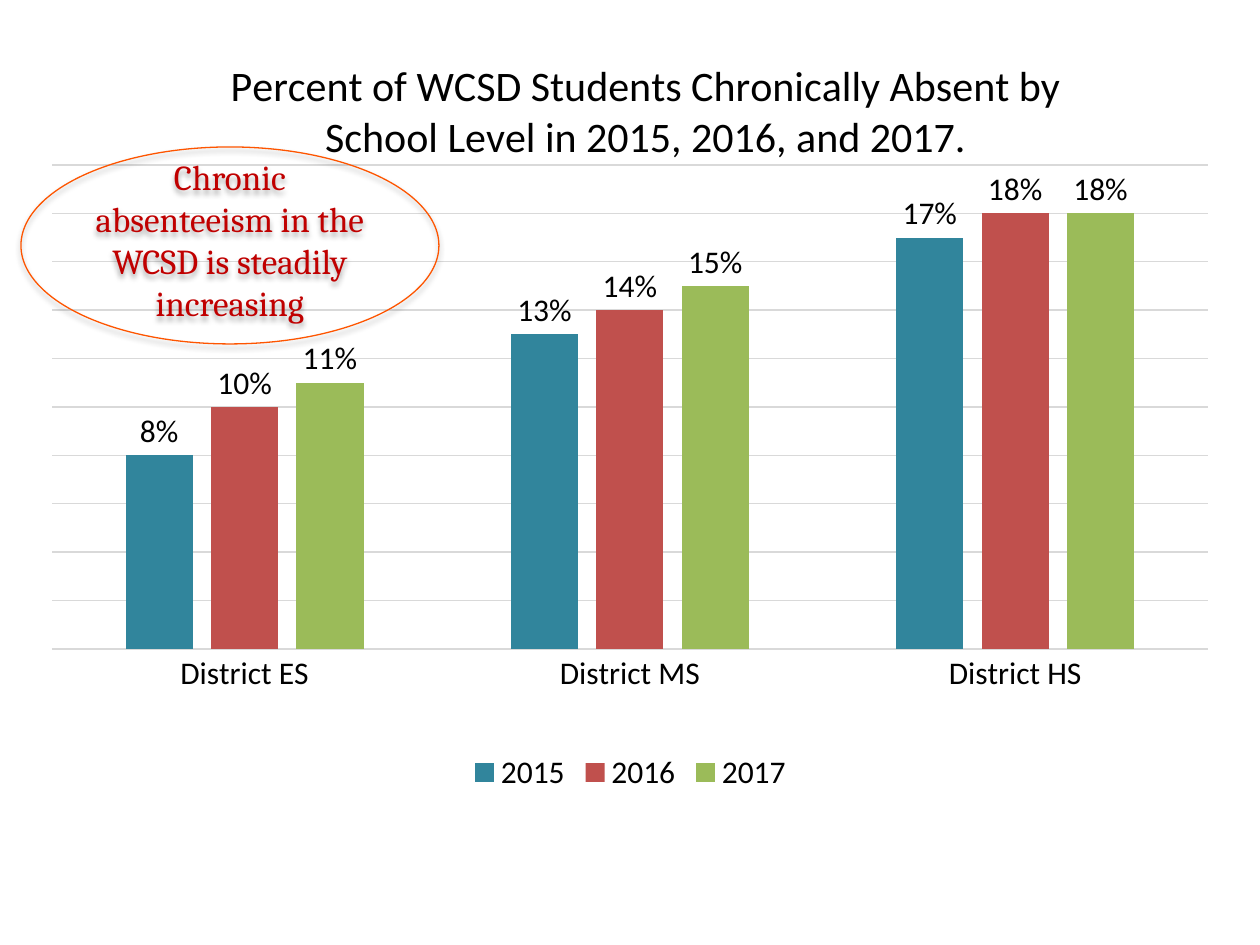
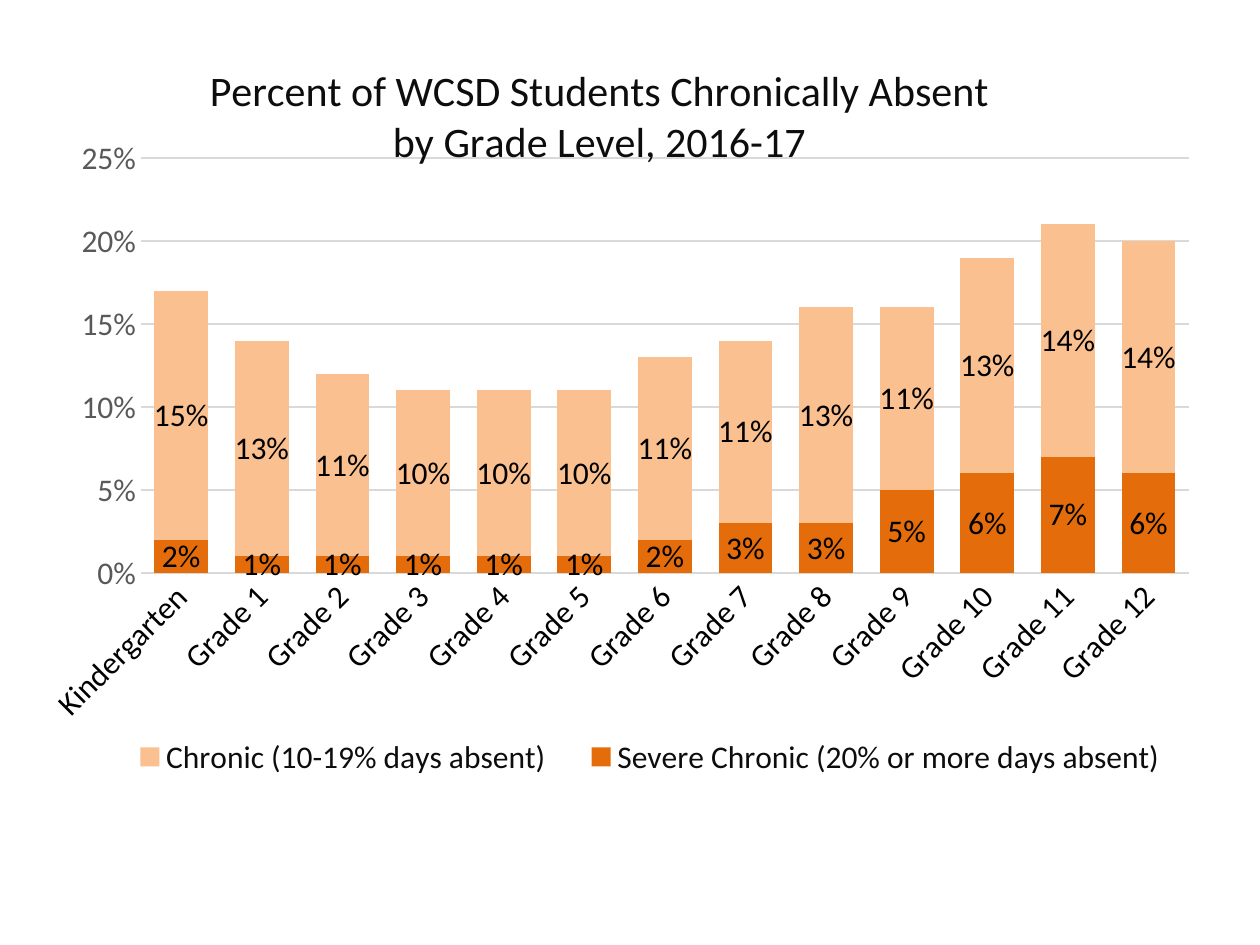
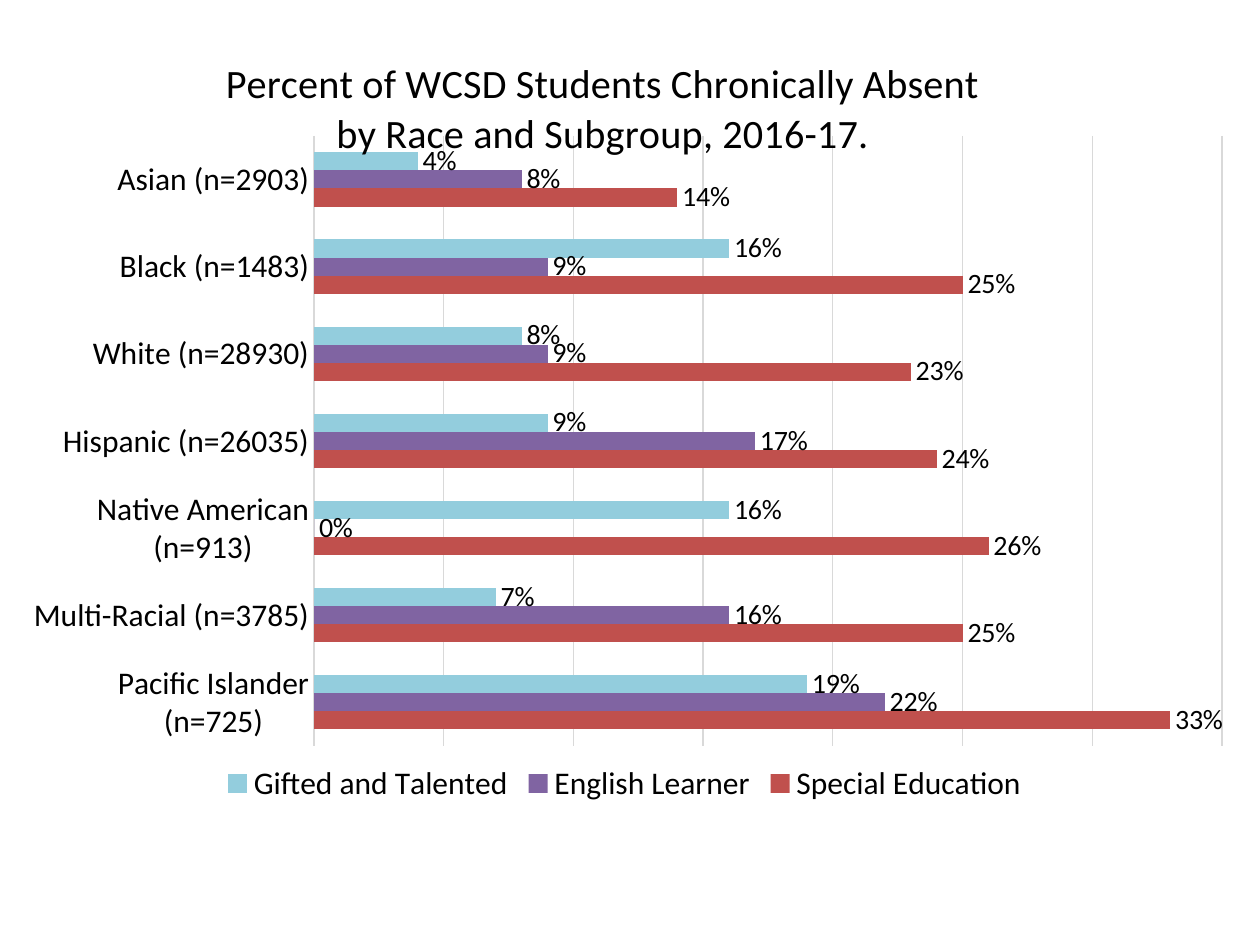
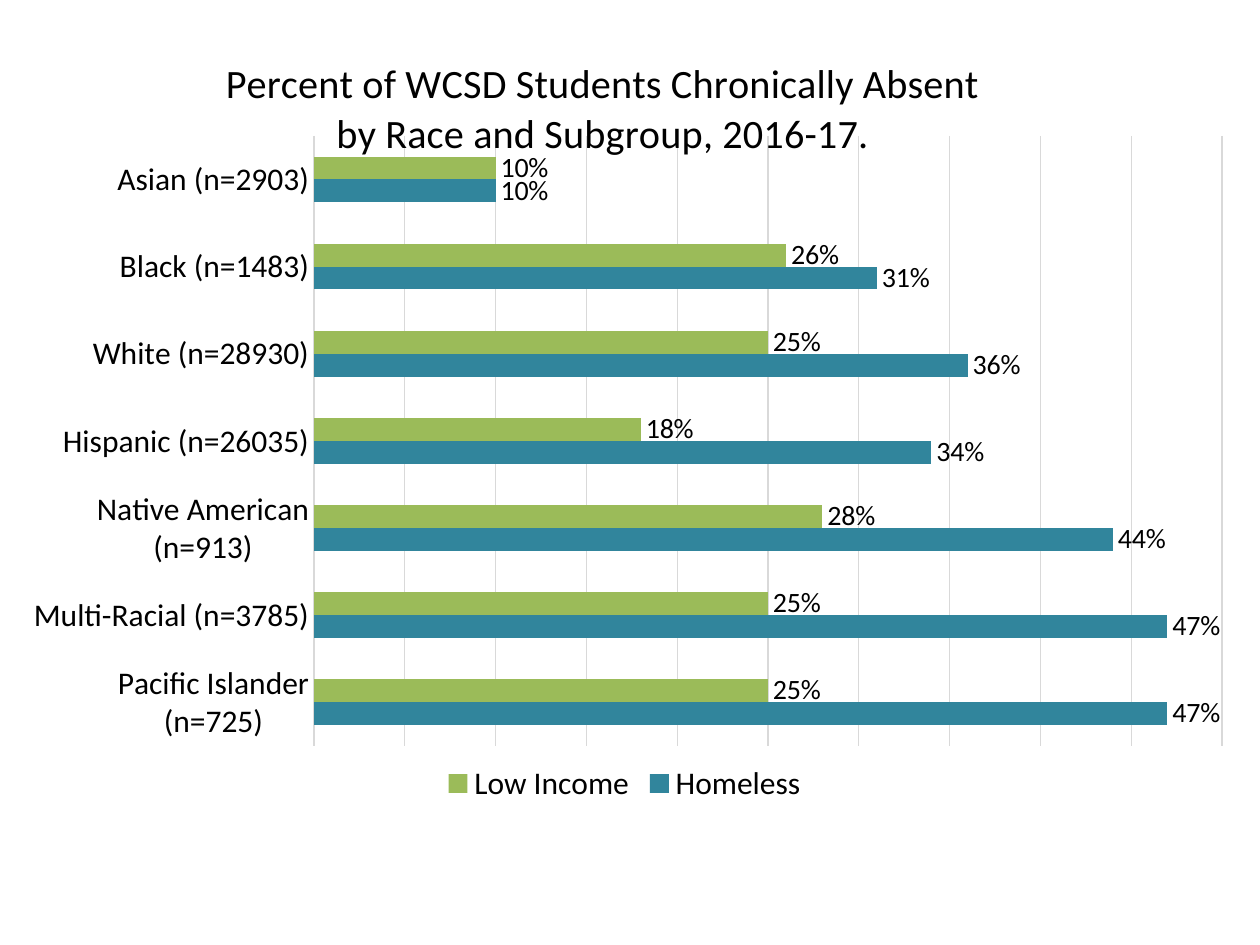
from dataclasses import dataclass
from typing import Optional

from lxml import etree
from pptx import Presentation
from pptx import util as u
from pptx.chart.data import CategoryChartData
from pptx.dml.color import RGBColor
from pptx.enum import chart as ec, shapes, text
from pptx.oxml import parse_xml
from pptx.oxml.ns import nsdecls, qn

PX = 914400 / 126
SLIDE = (1260, 945)
FONT, CALLOUT_FONT = "Calibri", "Cambria"
COLORS = {
    "text": "000000", "soft_text": "0D0D0D", "axis_text": "595959", "grid": "D9D9D9",
    "teal": "31859C", "red": "C0504D", "green": "9BBB59", "orange": "E46C0A",
    "peach": "FAC090", "purple": "8064A2", "sky": "93CDDD",
    "callout_line": "FE5500", "callout_text": "C00000",
}
TYPE = ec.XL_CHART_TYPE
LEGEND = ec.XL_LEGEND_POSITION


@dataclass
class Box:
    x: int
    y: int
    w: int = 0
    h: int = 0

    def emu(self) -> list[int]:
        return [px(v) for v in (self.x, self.y, self.w, self.h)]


@dataclass
class Series:
    name: str
    color: str
    values: list[float]


@dataclass
class ChartSlide:
    kind: TYPE
    title: str
    title_size: int
    title_at: Box
    frame: Box
    plot: Box
    categories: list[str]
    series: list[Series]
    axis_max: float
    axis_step: float
    gap: int
    overlap: int = 0
    label_size: int = 18
    text_color: str = "text"
    show_axis: bool = False
    label_angle: int = 0
    legend: LEGEND = LEGEND.BOTTOM
    legend_box: Optional[Box] = None


def px(n: float) -> int:
    return round(n * PX)


def rgb(name: str) -> RGBColor:
    return RGBColor.from_string(COLORS[name])


def style_font(font, size: int, color: str, name: str = FONT) -> None:
    font.name, font.size, font.bold = name, u.Pt(size), False
    font.color.rgb = rgb(color)


def style_line(line, color: str) -> None:
    line.width = u.Pt(0.75)
    line.color.rgb = rgb(color)


def set_layout(parent, box: Box, frame: Box, after: str = "", inner: bool = False) -> None:
    """Place a chart part at a slide position given in px."""
    for old in parent.findall(qn("c:layout")):
        parent.remove(old)
    layout = etree.Element(qn("c:layout"))
    manual = etree.SubElement(layout, qn("c:manualLayout"))
    values = {"xMode": "edge", "yMode": "edge",
              "x": (box.x - frame.x) / frame.w, "y": (box.y - frame.y) / frame.h}
    if inner:
        values = {"layoutTarget": "inner", **values}
    if box.w:
        values |= {"w": box.w / frame.w, "h": box.h / frame.h}
    for tag, value in values.items():
        val = value if isinstance(value, str) else f"{value:.4f}"
        etree.SubElement(manual, qn(f"c:{tag}")).set("val", val)
    position = parent.index(parent.find(qn(after))) + 1 if after else 0
    parent.insert(position, layout)


def style_axes(ch, spec_: ChartSlide) -> None:
    cat, val = ch.category_axis, ch.value_axis
    cat.major_tick_mark = val.major_tick_mark = ec.XL_TICK_MARK.NONE
    style_font(cat.tick_labels.font, 18, "text")
    style_line(cat.format.line, "grid")
    if spec_.label_angle:
        body = ch.element.xpath(".//c:catAx/c:txPr/a:bodyPr")[0]
        body.set("rot", str(spec_.label_angle * 60000))
    val.minimum_scale, val.maximum_scale = 0, spec_.axis_max
    val.major_unit = spec_.axis_step
    val.has_major_gridlines = True
    style_line(val.major_gridlines.format.line, "grid")
    val.tick_labels.number_format = "0%"
    val.tick_labels.number_format_is_linked = False
    style_font(val.tick_labels.font, 18, "axis_text")
    val.format.line.fill.background()
    val.visible = spec_.show_axis


def style_series(ch, spec_: ChartSlide) -> None:
    plot = ch.plots[0]
    plot.gap_width, plot.overlap = spec_.gap, spec_.overlap
    plot.vary_by_categories = False
    for ser, item in zip(plot.series, spec_.series):
        ser.format.fill.solid()
        ser.format.fill.fore_color.rgb = rgb(item.color)
        ser.invert_if_negative = False
        labels = ser.data_labels
        labels.show_value = True
        labels.number_format, labels.number_format_is_linked = "0%", False
        style_font(labels.font, spec_.label_size, "text")
        stacked = spec_.kind == TYPE.COLUMN_STACKED
        place = ec.XL_LABEL_POSITION
        labels.position = place.CENTER if stacked else place.OUTSIDE_END


def add_chart_slide(prs, spec_: ChartSlide):
    s = prs.slides.add_slide(prs.slide_layouts[6])
    data = CategoryChartData(number_format="0%")
    data.categories = spec_.categories
    for item in spec_.series:
        data.add_series(item.name, item.values)
    ch = s.shapes.add_chart(spec_.kind, *spec_.frame.emu(), data).chart
    style_font(ch.font, 10, "text")

    # Title
    tf = ch.chart_title.text_frame
    tf.text = spec_.title
    for p in tf.paragraphs:
        p.alignment = text.PP_ALIGN.CENTER
        for r in p.runs:
            style_font(r.font, spec_.title_size, spec_.text_color)
    set_layout(ch.element.xpath(".//c:chart/c:title")[0], spec_.title_at, spec_.frame, "c:tx")

    # Plot area
    style_axes(ch, spec_)
    style_series(ch, spec_)
    set_layout(ch.element.xpath(".//c:plotArea")[0], spec_.plot, spec_.frame, inner=True)

    # Legend
    ch.has_legend = True
    ch.legend.position = spec_.legend
    ch.legend.include_in_layout = False
    style_font(ch.legend.font, 18, spec_.text_color)
    if spec_.legend_box:
        legend = ch.element.xpath(".//c:legend")[0]
        set_layout(legend, spec_.legend_box, spec_.frame, "c:legendPos")
    return s


def add_callout(s, box: Box, words: str) -> None:
    sp = s.shapes.add_shape(shapes.MSO_SHAPE.OVAL, *box.emu())
    sp.fill.background()
    style_line(sp.line, "callout_line")
    sp.shadow.inherit = False
    sp.element.spPr.find(qn("a:effectLst")).append(parse_xml(
        f'<a:outerShdw {nsdecls("a")} blurRad="39370" dist="22860" dir="5400000" rotWithShape="0">'
        '<a:srgbClr val="000000"><a:alpha val="35000"/></a:srgbClr></a:outerShdw>'))
    tf = sp.text_frame
    tf.text = words
    tf.word_wrap = True
    tf.vertical_anchor = text.MSO_ANCHOR.MIDDLE
    tf.margin_left = tf.margin_top = tf.margin_right = 0
    tf.margin_bottom = px(11)
    p = tf.paragraphs[0]
    p.alignment = text.PP_ALIGN.CENTER
    style_font(p.runs[0].font, 20, "callout_text", CALLOUT_FONT)


RACES = ["Pacific Islander (n=725)", "Multi-Racial (n=3785)", "Native American (n=913)",
         "Hispanic (n=26035)", "White (n=28930)", "Black (n=1483)", "Asian (n=2903)"]


def subgroup_slide(series: list[Series], axis_max: float) -> ChartSlide:
    return ChartSlide(
        TYPE.BAR_CLUSTERED,
        "Percent of WCSD Students Chronically Absent\nby Race and Subgroup, 2016-17.",
        23, Box(222, 53), Box(21, 21, 1207, 788), Box(314, 136, 908, 610),
        RACES, series, axis_max, 0.05, gap=182, label_size=16)


SCHOOL_LEVELS = ChartSlide(
    TYPE.COLUMN_CLUSTERED,
    "Percent of WCSD Students Chronically Absent by\nSchool Level in 2015, 2016, and 2017.",
    24, Box(227, 56), Box(32, 32, 1197, 766), Box(52, 165, 1156, 484),
    ["District ES", "District MS", "District HS"],
    [Series("2015", "teal", [0.08, 0.13, 0.17]),
     Series("2016", "red", [0.10, 0.14, 0.18]),
     Series("2017", "green", [0.11, 0.15, 0.18])],
    0.2, 0.02, gap=219, overlap=-27)

GRADE_LEVELS = ChartSlide(
    TYPE.COLUMN_STACKED,
    "Percent of WCSD Students Chronically Absent\nby Grade Level, 2016-17",
    24, Box(206, 61), Box(32, 32, 1187, 766), Box(141, 158, 1048, 415),
    ["Kindergarten"] + [f"Grade {n}" for n in range(1, 13)],
    [Series("Severe Chronic (20% or more days absent)", "orange",
            [0.02, 0.01, 0.01, 0.01, 0.01, 0.01, 0.02, 0.03, 0.03, 0.05, 0.06, 0.07, 0.06]),
     Series("Chronic (10-19% days absent)", "peach",
            [0.15, 0.13, 0.11, 0.10, 0.10, 0.10, 0.11, 0.11, 0.13, 0.11, 0.13, 0.14, 0.14])],
    0.25, 0.05, gap=50, overlap=100, text_color="soft_text", show_axis=True,
    label_angle=-45, legend=LEGEND.RIGHT, legend_box=Box(105, 733, 1090, 48))

SERVICES = subgroup_slide(
    [Series("Special Education", "red", [0.33, 0.25, 0.26, 0.24, 0.23, 0.25, 0.14]),
     Series("English Learner", "purple", [0.22, 0.16, 0, 0.17, 0.09, 0.09, 0.08]),
     Series("Gifted and Talented", "sky", [0.19, 0.07, 0.16, 0.09, 0.08, 0.16, 0.04])], 0.35)

HARDSHIP = subgroup_slide(
    [Series("Homeless", "teal", [0.47, 0.47, 0.44, 0.34, 0.36, 0.31, 0.10]),
     Series("Low Income", "green", [0.25, 0.25, 0.28, 0.18, 0.25, 0.26, 0.10])], 0.5)


def main() -> None:
    prs = Presentation()
    prs.slide_width, prs.slide_height = (px(v) for v in SLIDE)
    s = add_chart_slide(prs, SCHOOL_LEVELS)
    add_callout(s, Box(21, 147, 418, 197),
                "Chronic absenteeism in the WCSD is steadily increasing")
    for item in (GRADE_LEVELS, SERVICES, HARDSHIP):
        add_chart_slide(prs, item)
    prs.save("out.pptx")


if __name__ == "__main__":
    main()
